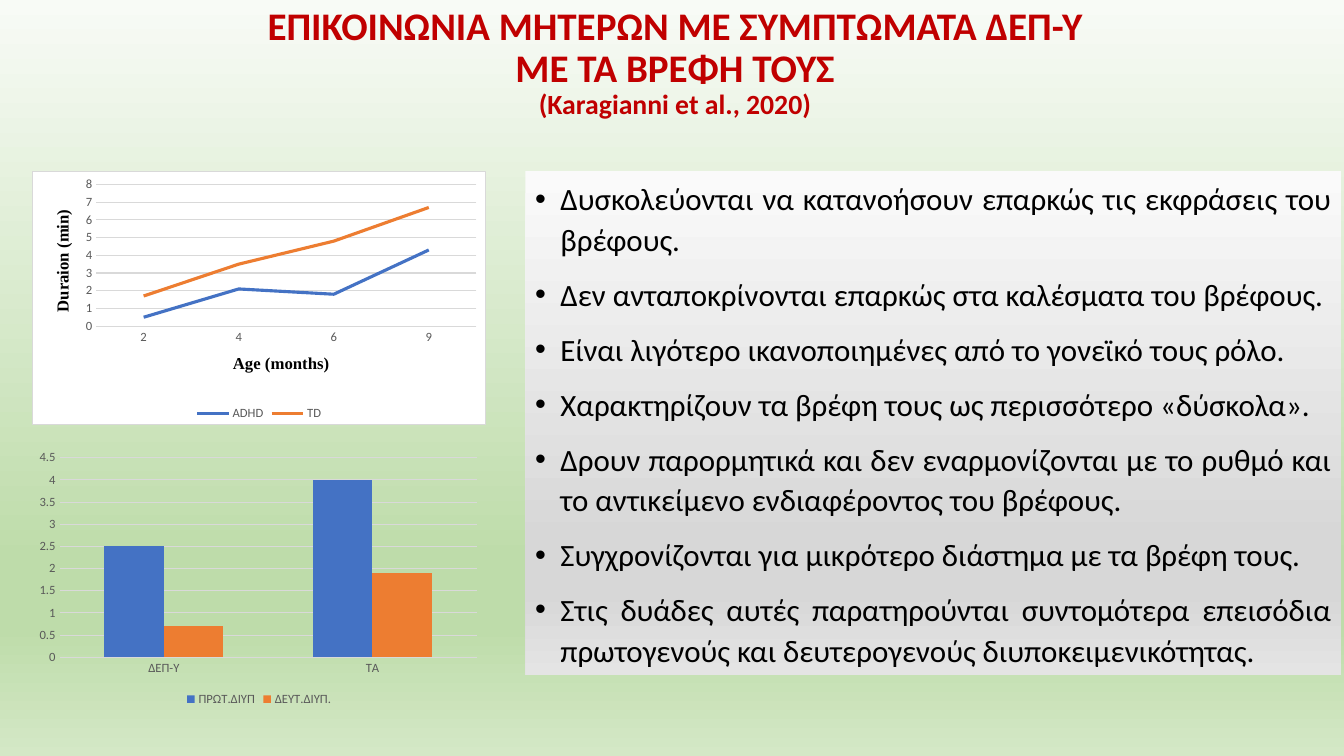
"""Build a slide on how mothers with ADHD symptoms communicate with their infants."""
from dataclasses import dataclass

from lxml import etree
from pptx import Presentation
from pptx.chart.data import CategoryChartData
from pptx.dml.color import RGBColor
from pptx.enum.chart import XL_CHART_TYPE, XL_LEGEND_POSITION, XL_TICK_MARK
from pptx.enum.shapes import MSO_SHAPE
from pptx.enum.text import MSO_ANCHOR, PP_ALIGN
from pptx.oxml import parse_xml
from pptx.oxml.ns import nsdecls, qn
from pptx.util import Inches, Pt

LINE, COLUMN = XL_CHART_TYPE.LINE, XL_CHART_TYPE.COLUMN_CLUSTERED
BOTTOM_LEGEND, NO_TICK = XL_LEGEND_POSITION.BOTTOM, XL_TICK_MARK.NONE
RECTANGLE, TOP, BOTTOM = MSO_SHAPE.RECTANGLE, MSO_ANCHOR.TOP, MSO_ANCHOR.BOTTOM
CENTER, JUSTIFY = PP_ALIGN.CENTER, PP_ALIGN.JUSTIFY


@dataclass(frozen=True)
class Theme:
    """Colours, fonts and type sizes of the slide."""
    font: str = "Calibri"
    axis_font: str = "Times New Roman"
    red: str = "C00000"
    black: str = "000000"
    white: str = "FFFFFF"
    gray: str = "595959"
    grid: str = "D9D9D9"
    series: tuple = ("4472C4", "ED7D31")
    green_fade: tuple = ((0, "F8FBF6"), (74, "BEDCAA"), (83, "BEDCAA"), (100, "D4E8C6"))
    gray_fade: tuple = ((0, "FAFAFA"), (74, "D7D7D7"), (83, "D7D7D7"), (100, "E4E4E4"))
    title_size: float = 27.9
    citation_size: float = 19.8
    body_size: float = 22.1
    axis_title_size: float = 12
    label_size: float = 9


TITLE_LINES = ("ΕΠΙΚΟΙΝΩΝΙΑ ΜΗΤΕΡΩΝ ΜΕ ΣΥΜΠΤΩΜΑΤΑ ΔΕΠ-Υ", "ΜΕ ΤΑ ΒΡΕΦΗ ΤΟΥΣ")
CITATION = "(Karagianni et al., 2020)"
FINDINGS = (
    "Δυσκολεύονται να κατανοήσουν επαρκώς τις εκφράσεις του βρέφους.",
    "Δεν ανταποκρίνονται επαρκώς στα καλέσματα του βρέφους.",
    "Είναι λιγότερο ικανοποιημένες από το γονεϊκό τους ρόλο.",
    "Χαρακτηρίζουν τα βρέφη τους ως περισσότερο «δύσκολα».",
    "Δρουν παρορμητικά και δεν εναρμονίζονται με το ρυθμό και "
    "το αντικείμενο ενδιαφέροντος του βρέφους.",
    "Συγχρονίζονται για μικρότερο διάστημα με τα βρέφη τους.",
    "Στις δυάδες αυτές παρατηρούνται συντομότερα επεισόδια "
    "πρωτογενούς και δευτερογενούς διυποκειμενικότητας.",
)


class SlideBuilder:
    """Draw the elements of one slide in one theme."""

    def __init__(self, slide, theme):
        """Keep the slide and its theme."""
        self.slide = slide
        self.theme = theme

    def style_font(self, font, size, color, name=None, bold=False):
        """Set the look of a font."""
        font.name = name or self.theme.font
        font.size = Pt(size)
        font.bold = bold
        font.color.rgb = RGBColor.from_string(color)

    def fade(self, fill, element, stops):
        """Fill from top to bottom through the given colour stops."""
        fill.gradient()
        fill.gradient_angle = 270
        stop_list = element.xpath(".//a:gsLst")[0]
        for stop in list(stop_list):
            stop_list.remove(stop)
        for position, color in stops:
            stop = etree.SubElement(stop_list, qn("a:gs"), pos=str(position * 1000))
            etree.SubElement(stop, qn("a:srgbClr"), val=color)

    def background(self):
        """Fade the slide background."""
        self.fade(self.slide.background.fill, self.slide._element, self.theme.green_fade)

    def title(self, box, lines, citation):
        """Write the centred heading with its citation."""
        frame = self.slide.shapes.add_textbox(*map(Inches, box)).text_frame
        frame.word_wrap = True
        frame.vertical_anchor = BOTTOM
        frame.margin_bottom = Inches(0.5)
        sizes = [self.theme.title_size] * len(lines) + [self.theme.citation_size]
        for index, (text, size) in enumerate(zip((*lines, citation), sizes)):
            paragraph = frame.add_paragraph() if index else frame.paragraphs[0]
            paragraph.text = text
            paragraph.alignment = CENTER
            paragraph.line_spacing = 0.9
            self.style_font(paragraph.font, size, self.theme.red, bold=True)

    def bullet_panel(self, box, items):
        """Draw a faded panel with a justified bullet list."""
        shape = self.slide.shapes.add_shape(RECTANGLE, *map(Inches, box))
        shape.shadow.inherit = False
        shape.line.fill.background()
        self.fade(shape.fill, shape._element, self.theme.gray_fade)
        frame = shape.text_frame
        frame.word_wrap = True
        frame.vertical_anchor = TOP
        for index, text in enumerate(items):
            paragraph = frame.add_paragraph() if index else frame.paragraphs[0]
            paragraph.text = text
            paragraph.alignment = JUSTIFY
            paragraph.line_spacing = 1.1
            paragraph.space_before = Pt(10)
            self.style_font(paragraph.font, self.theme.body_size, self.theme.black)
            properties = paragraph._p.get_or_add_pPr()
            properties.set("marL", str(Inches(0.25)))
            properties.set("indent", str(Inches(-0.25)))
            bullet_font = etree.Element(qn("a:buFont"), typeface="Arial")
            bullet = etree.Element(qn("a:buChar"), char="•")
            properties.find(qn("a:defRPr")).addprevious(bullet_font)
            bullet_font.addnext(bullet)

    def chart(self, kind, box, categories, series, plot_box, maximum, step):
        """Add a chart with a bottom legend and a fixed plot area."""
        theme = self.theme
        data = CategoryChartData()
        data.categories = categories
        for name, values in series:
            data.add_series(name, values)
        chart = self.slide.shapes.add_chart(kind, *map(Inches, box), data).chart
        self.style_font(chart.font, theme.label_size, theme.gray)
        chart.has_title = False
        chart.has_legend = True
        chart.legend.position = BOTTOM_LEGEND
        chart.legend.include_in_layout = False
        self.style_font(chart.legend.font, theme.label_size, theme.gray)
        for axis in (chart.category_axis, chart.value_axis):
            axis.major_tick_mark = axis.minor_tick_mark = NO_TICK
            axis.format.line.fill.background()
            self.style_font(axis.tick_labels.font, theme.label_size, theme.gray)
        axis = chart.value_axis
        axis.minimum_scale, axis.maximum_scale, axis.major_unit = 0, maximum, step
        self.thin_line(axis.major_gridlines.format.line)
        plot = chart.plots[0]
        plot.vary_by_categories = False
        for item, color in zip(plot.series, theme.series):
            if kind == LINE:
                item.smooth = False
                item.format.line.width = Pt(2.25)
                fill = item.format.line.fill
            else:
                fill = item.format.fill
            fill.solid()
            fill.fore_color.rgb = RGBColor.from_string(color)
        if kind == COLUMN:
            plot.gap_width = 150
            plot.overlap = 0
        self.place_plot(chart, plot_box)
        return chart

    def thin_line(self, line):
        """Make a line thin and pale."""
        line.width = Pt(0.75)
        line.color.rgb = RGBColor.from_string(self.theme.grid)

    def place_plot(self, chart, plot_box):
        """Fix the inner plot area as fractions of the chart."""
        area = chart._chartSpace.chart.plotArea
        for layout in area.findall(qn("c:layout")):
            area.remove(layout)
        sizes = "".join(f'<c:{key} val="{value}"/>' for key, value in zip("xywh", plot_box))
        area.insert(0, parse_xml(
            f'<c:layout {nsdecls("c")}><c:manualLayout><c:layoutTarget val="inner"/>'
            f'<c:xMode val="edge"/><c:yMode val="edge"/>{sizes}</c:manualLayout></c:layout>'))

    def axis_titles(self, chart, category_title, value_title):
        """Name both axes and draw the category line."""
        self.thin_line(chart.category_axis.format.line)
        for axis, text in ((chart.category_axis, category_title), (chart.value_axis, value_title)):
            paragraph = axis.axis_title.text_frame.paragraphs[0]
            paragraph.text = text
            self.style_font(paragraph.font, self.theme.axis_title_size, self.theme.black,
                            self.theme.axis_font, True)

    def chart_frame(self, chart):
        """Give the chart a white ground and a pale border."""
        chart._chartSpace.find(qn("c:txPr")).addprevious(parse_xml(
            f'<c:spPr {nsdecls("c", "a")}><a:solidFill><a:srgbClr val="{self.theme.white}"/>'
            f'</a:solidFill><a:ln w="{Pt(0.75)}"><a:solidFill>'
            f'<a:srgbClr val="{self.theme.grid}"/></a:solidFill></a:ln></c:spPr>'))


def main():
    """Build and save the slide."""
    presentation = Presentation()
    presentation.slide_width, presentation.slide_height = Inches(13.33), Inches(7.5)
    slide = presentation.slides.add_slide(presentation.slide_layouts[6])
    builder = SlideBuilder(slide, Theme())
    builder.background()
    builder.title((0.23, 0.14, 12.93, 1.56), TITLE_LINES, CITATION)
    builder.bullet_panel((5.21, 1.7, 8.09, 5), FINDINGS)
    duration = builder.chart(
        LINE, (0.32, 1.7, 4.5, 2.52), ("2", "4", "6", "9"),
        (("ADHD", (0.5, 2.1, 1.8, 4.3)), ("TD", (1.7, 3.5, 4.8, 6.7))),
        (0.14, 0.05, 0.84, 0.56), 8, 1)
    builder.axis_titles(duration, "Age (months)", "Duraion (min)")
    builder.chart_frame(duration)
    builder.chart(
        COLUMN, (0.32, 4.41, 4.5, 2.64), ("ΔΕΠ-Υ", "TA"),
        (("ΠΡΩΤ.ΔΙΥΠ", (2.5, 4)), ("ΔΕΥΤ.ΔΙΥΠ.", (0.7, 1.9))),
        (0.06, 0.05, 0.92, 0.75), 4.5, 0.5)
    presentation.save("out.pptx")


if __name__ == "__main__":
    main()
